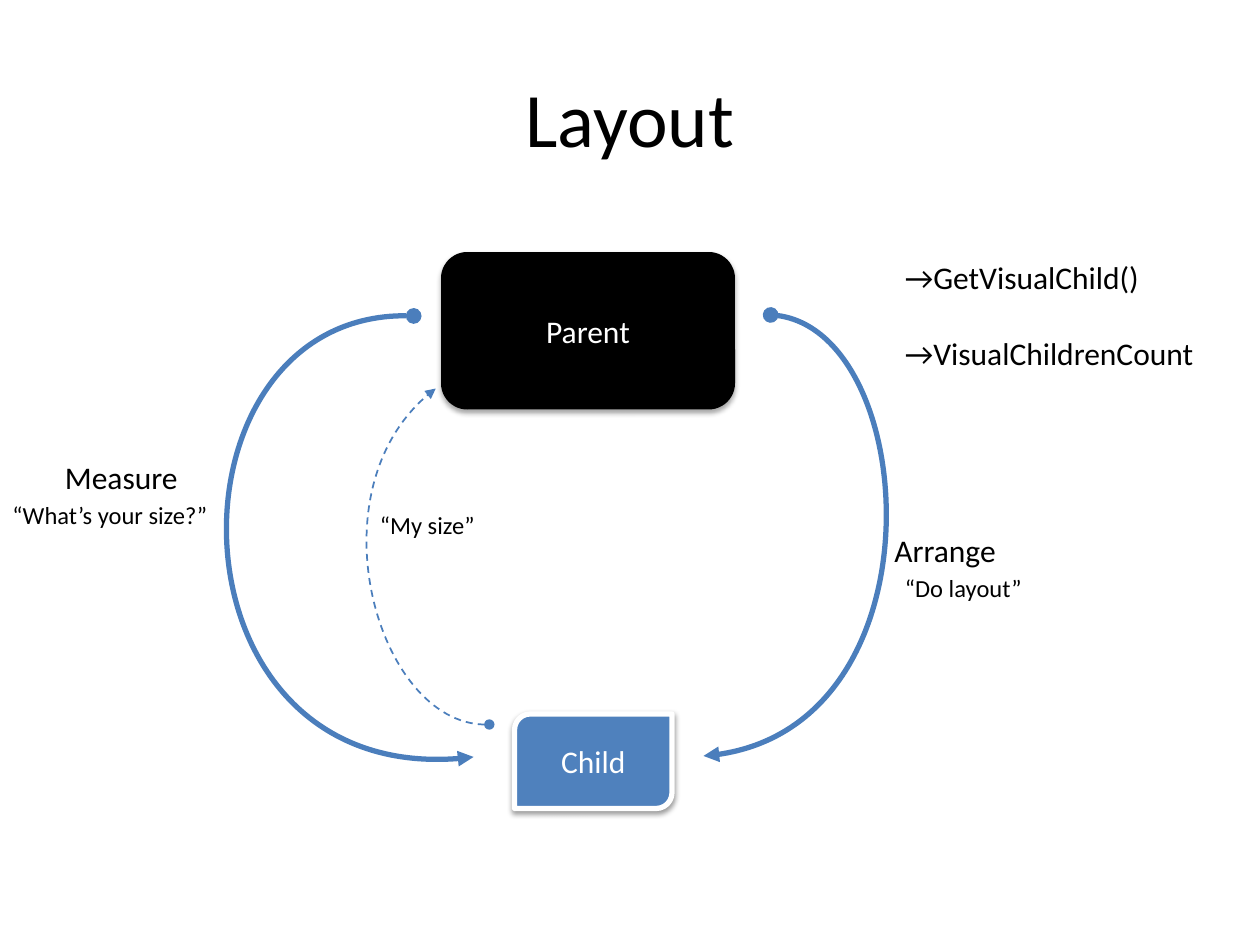
from dataclasses import dataclass

from lxml import etree
from pptx import Presentation
from pptx.dml.color import RGBColor
from pptx.enum.dml import MSO_LINE
from pptx.enum.shapes import MSO_SHAPE
from pptx.enum.text import MSO_ANCHOR, MSO_AUTO_SIZE, PP_ALIGN
from pptx.oxml.ns import qn
from pptx.util import Inches, Pt

ROUNDED = MSO_SHAPE.ROUNDED_RECTANGLE
DIAGONAL = MSO_SHAPE.ROUND_2_DIAG_RECTANGLE
CENTER = PP_ALIGN.CENTER
MIDDLE = MSO_ANCHOR.MIDDLE
FIT_TEXT = MSO_AUTO_SIZE.SHAPE_TO_FIT_TEXT
DASH = MSO_LINE.DASH
TITLE_ONLY = 5
COLUMNS, ROWS = 120, 90


@dataclass(frozen=True)
class Theme:
    font: str = "Calibri"
    black: str = "000000"
    white: str = "FFFFFF"
    blue: str = "4F81BD"
    curve: str = "4B7EBC"
    title: int = 44
    body: int = 18
    note: int = 14


class LayoutSlide:
    def __init__(self, presentation, theme):
        self.theme = theme
        self.slide = presentation.slides.add_slide(
            presentation.slide_layouts[TITLE_ONLY])
        self.column = presentation.slide_width / COLUMNS
        self.row = presentation.slide_height / ROWS

    def point(self, x, y):
        return round(x * self.column), round(y * self.row)

    def place(self, x, y, width, height):
        return *self.point(x, y), *self.point(width, height)

    def style(self, paragraph, size, color):
        font = paragraph.font
        font.name, font.size = self.theme.font, Pt(size)
        font.color.rgb = RGBColor.from_string(color)

    def title(self, text, *area):
        shape = self.slide.shapes.title
        shape.left, shape.top, shape.width, shape.height = self.place(*area)
        shape.text_frame.text = text
        shape.text_frame.vertical_anchor = MIDDLE
        paragraph = shape.text_frame.paragraphs[0]
        paragraph.alignment = CENTER
        self.style(paragraph, self.theme.title, self.theme.black)

    def box(self, kind, text, area, fill, shadow, border=None):
        shape = self.slide.shapes.add_shape(kind, *self.place(*area))
        shape.fill.solid()
        shape.fill.fore_color.rgb = RGBColor.from_string(fill)
        if border:
            shape.line.color.rgb = RGBColor.from_string(border)
            shape.line.width = Pt(3)
        else:
            shape.line.fill.background()
        self.drop_shadow(shape, *shadow)
        shape.text_frame.text = text
        shape.text_frame.vertical_anchor = MIDDLE
        paragraph = shape.text_frame.paragraphs[0]
        paragraph.alignment = CENTER
        self.style(paragraph, self.theme.body, self.theme.white)

    def drop_shadow(self, shape, opacity, blur, distance):
        shape.shadow.inherit = False
        effects = shape.element.spPr.find(qn("a:effectLst"))
        outer = etree.SubElement(
            effects, qn("a:outerShdw"), blurRad=str(Pt(blur)),
            dist=str(Pt(distance)), dir="5400000", rotWithShape="0")
        color = etree.SubElement(outer, qn("a:srgbClr"), val=self.theme.black)
        etree.SubElement(color, qn("a:alpha"), val=str(opacity * 1000))

    def label(self, lines, area, size, wrap=False, gap=0):
        frame = self.slide.shapes.add_textbox(*self.place(*area)).text_frame
        frame.word_wrap = wrap
        frame.auto_size = FIT_TEXT
        frame.text = "\n".join(lines)
        for index, paragraph in enumerate(frame.paragraphs):
            paragraph.space_before = Pt(gap if index else 0)
            self.style(paragraph, size, self.theme.black)

    def curve(self, start, *controls, width=3, dash=None):
        builder = self.slide.shapes.build_freeform(*self.point(*start))
        builder.add_line_segments(
            [self.point(*control) for control in controls], close=False)
        shape = builder.convert_to_shape()
        shape.shadow.inherit = False
        shape.fill.background()
        shape.line.color.rgb = RGBColor.from_string(self.theme.curve)
        shape.line.width = Pt(width)
        if dash:
            shape.line.dash_style = dash
        # Turn the three segments into one cubic Bézier curve
        path = next(shape.element.iter(qn("a:path")))
        bezier = etree.SubElement(path, qn("a:cubicBezTo"))
        for segment in path.findall(qn("a:lnTo")):
            bezier.append(segment[0])
            path.remove(segment)
        # Round start and arrow end
        line = shape.element.spPr.find(qn("a:ln"))
        etree.SubElement(line, qn("a:headEnd"), type="oval")
        etree.SubElement(line, qn("a:tailEnd"), type="triangle")


def main():
    presentation = Presentation()
    presentation.slide_width, presentation.slide_height = Inches(10), Inches(7.5)
    theme = Theme()
    page = LayoutSlide(presentation, theme)

    page.title("Layout", 6, 3.6, 108, 15)

    # Parent and child elements
    page.box(ROUNDED, "Parent", (42, 24, 28, 15), theme.black, (35, 3.1, 1.8))
    page.box(DIAGONAL, "Child", (49, 68, 15, 9), theme.blue, (38, 3.1, 1.6),
             border=theme.white)

    # Measure pass, arrange pass and the child's answer
    page.curve((39.4, 30.1), (15, 29), (15.1, 76), (45.1, 72.1))
    page.curve((73.4, 30), (87.6, 30.6), (90, 70.4), (67, 72))
    page.curve((46.6, 69), (36.1, 69.5), (29.4, 46), (41.5, 37),
               width=1, dash=DASH)

    # Names of the passes and the parent's members
    page.label(["Measure"], (5, 43, 13.3, 4.8), theme.body)
    page.label(["Arrange"], (84, 50, 12.2, 4.8), theme.body)
    page.label(["→GetVisualChild()", "→VisualChildrenCount"],
               (85, 24, 30.5, 12.1), theme.body, gap=22)

    # What the elements say
    for text, area in (("“What’s your size?”", (0, 47, 23, 4.1)),
                       ("“My size”", (35, 48, 12, 4.1)),
                       ("“Do layout”", (85, 54, 14, 4.1))):
        page.label([text], area, theme.note, wrap=True)

    presentation.save("out.pptx")


if __name__ == "__main__":
    main()
